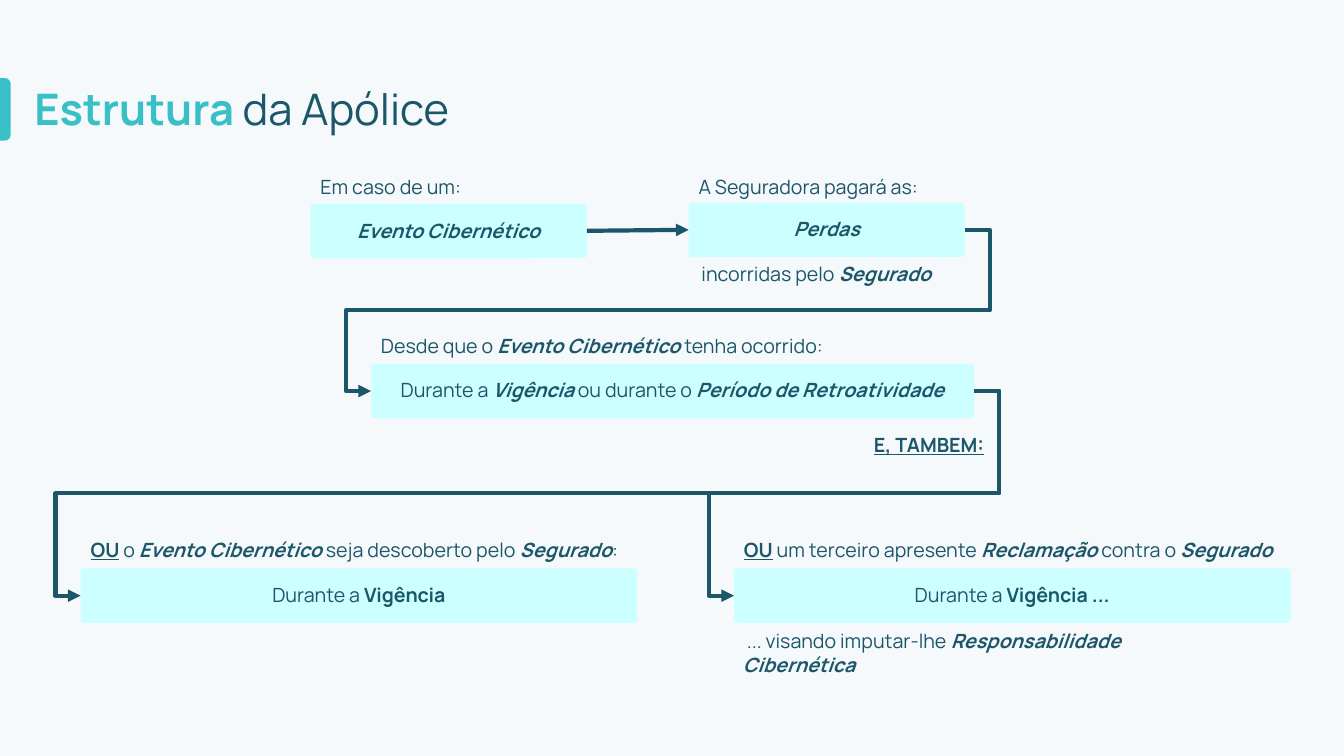
"""Builds the policy structure flow slide."""
from dataclasses import dataclass

from lxml import etree
from pptx import Presentation
from pptx import util as u
from pptx.dml import color
from pptx.enum import shapes, text
from pptx.oxml import ns

FONT = "Manrope"
DARK, TEAL, PALE, BACKGROUND = "1B5669", "39BFC6", "CCFFFF", "F5F9FB"
BOX_HEIGHT, LABEL_HEIGHT, STUB = 0.54, 0.34, 0.25
BOTTOM_BOX_TOP, BOTTOM_LABEL_TOP, BOTTOM_WIDTH = 5.64, 5.29, 5.52


@dataclass
class Piece:
    content: str
    style: str = ""
    size: float = 14
    color: str = DARK


@dataclass
class Block:
    left: float
    top: float
    width: float
    pieces: list[Piece]
    line_spacing: float | None = None


@dataclass
class Elbow:
    start: str
    end: str


BOXES = {
    "event": Block(3.08, 2.02, 2.74, [Piece("Evento Cibernético", "bi")]),
    "losses": Block(6.83, 2.01, 2.74, [Piece("Perdas", "bi")], 0.9),
    "period": Block(3.68, 3.61, 5.98, [
        Piece("Durante a "), Piece("Vigência ", "bi"), Piece("ou durante o "),
        Piece("Período de Retroatividade", "bi")], 0.9),
    "discovery": Block(0.8, BOTTOM_BOX_TOP, BOTTOM_WIDTH, [
        Piece("Durante a"), Piece(" Vigência", "b")], 0.9),
    "claim": Block(7.28, BOTTOM_BOX_TOP, BOTTOM_WIDTH, [
        Piece("Durante a"), Piece(" Vigência ...", "b")], 0.9),
}

LABELS = [
    Block(3.08, 1.69, 1.65, [Piece("Em caso de um:")]),
    Block(6.83, 1.69, 2.48, [Piece("A Seguradora pagará as:")]),
    Block(6.82, 2.55, 2.53, [Piece(" incorridas pelo "), Piece("Segurado", "bi")]),
    Block(3.68, 3.26, 4.68, [
        Piece("Desde que o "), Piece("Evento Cibernético ", "bi"), Piece("tenha ocorrido:")]),
    Block(8.57, 4.25, 1.3, [Piece("E, TAMBEM:", "bu")]),
    Block(0.8, BOTTOM_LABEL_TOP, 5.46, [
        Piece("OU", "bu"), Piece(" o "), Piece("Evento Cibernético", "bi"),
        Piece(" seja descoberto pelo "), Piece("Segurado", "bi"), Piece(":")]),
    Block(7.28, BOTTOM_LABEL_TOP, BOTTOM_WIDTH, [
        Piece("OU", "bu"), Piece(" um terceiro apresente "), Piece("Reclamação", "bi"),
        Piece(" contra o "), Piece("Segurado", "bi")]),
    Block(7.27, 6.19, 5.04, [
        Piece(" ... visando imputar-lhe "), Piece("Responsabilidade Cibernética", "bi")]),
]

ELBOWS = [Elbow("losses", "period"), Elbow("period", "discovery"), Elbow("period", "claim")]


def paint(target, hex_color: str) -> None:
    target.solid()
    target.fore_color.rgb = color.RGBColor.from_string(hex_color)


def write(frame, pieces: list[Piece], align, line_spacing: float | None = None) -> None:
    frame.word_wrap = True
    paragraph = frame.paragraphs[0]
    paragraph.alignment = align
    if line_spacing:
        paragraph.line_spacing = line_spacing
    for piece in pieces:
        run = paragraph.add_run()
        run.text = piece.content
        font = run.font
        font.name, font.size = FONT, u.Pt(piece.size)
        font.bold = "b" in piece.style
        font.italic = "i" in piece.style
        font.underline = "u" in piece.style
        paint(font.fill, piece.color)


def add_plain_shape(slide, preset, left: float, top: float, width: float, height: float,
                    fill: str):
    shape = slide.shapes.add_shape(
        preset, u.Inches(left), u.Inches(top), u.Inches(width), u.Inches(height))
    shape.shadow.inherit = False
    paint(shape.fill, fill)
    shape.line.fill.background()
    return shape


def add_title(slide) -> None:
    title = slide.shapes.title
    title.left, title.top = u.Inches(0.34), u.Inches(0.87)
    title.width, title.height = u.Inches(12.25), u.Inches(0.44)
    frame = title.text_frame
    frame.margin_left = frame.margin_right = frame.margin_top = frame.margin_bottom = 0
    frame.auto_size = text.MSO_AUTO_SIZE.NONE
    frame.vertical_anchor = text.MSO_ANCHOR.TOP
    write(frame, [Piece("Estrutura ", "b", 31, TEAL), Piece("da Apólice", "", 31)],
          text.PP_ALIGN.LEFT, 0.9)


def add_box(slide, block: Block):
    box = add_plain_shape(slide, shapes.MSO_SHAPE.ROUNDED_RECTANGLE,
                          block.left, block.top, block.width, BOX_HEIGHT, PALE)
    box.adjustments[0] = 0.06
    box.text_frame.vertical_anchor = text.MSO_ANCHOR.MIDDLE
    write(box.text_frame, block.pieces, text.PP_ALIGN.CENTER, block.line_spacing)
    return box


def add_label(slide, block: Block) -> None:
    label = slide.shapes.add_textbox(u.Inches(block.left), u.Inches(block.top),
                                     u.Inches(block.width), u.Inches(LABEL_HEIGHT))
    label.text_frame.auto_size = text.MSO_AUTO_SIZE.SHAPE_TO_FIT_TEXT
    write(label.text_frame, block.pieces, text.PP_ALIGN.LEFT)


def add_arrow(slide, kind, start, end):
    arrow = slide.shapes.add_connector(
        kind, start.left + start.width, start.top + start.height // 2,
        end.left, end.top + end.height // 2)
    paint(arrow.line.fill, DARK)
    arrow.line.width = u.Pt(3)
    etree.SubElement(arrow.line._get_or_add_ln(), ns.qn("a:tailEnd"), type="triangle")
    etree.SubElement(arrow._element.spPr, ns.qn("a:effectLst"))
    return arrow


def add_elbow(slide, start, end) -> None:
    arrow = add_arrow(slide, shapes.MSO_CONNECTOR.ELBOW, start, end)
    geometry = arrow._element.spPr.find(ns.qn("a:prstGeom"))
    geometry.set("prst", "bentConnector5")
    guides = geometry.find(ns.qn("a:avLst"))
    if guides is None:
        guides = etree.SubElement(geometry, ns.qn("a:avLst"))
    stub = u.Inches(STUB) / arrow.width
    for number, share in enumerate((-stub, 0.5, 1 + stub), 1):
        etree.SubElement(guides, ns.qn("a:gd"), name=f"adj{number}",
                         fmla=f"val {round(share * 100000)}")


def main() -> None:
    presentation = Presentation()
    presentation.slide_width, presentation.slide_height = u.Inches(13.33), u.Inches(7.5)
    slide = presentation.slides.add_slide(presentation.slide_layouts[5])
    paint(slide.background.fill, BACKGROUND)
    marker = add_plain_shape(slide, shapes.MSO_SHAPE.ROUND_2_SAME_RECTANGLE,
                             -0.26, 1.03, 0.62, 0.11, TEAL)
    marker.rotation = 90
    marker.adjustments[0] = 0.5
    add_title(slide)
    boxes = {name: add_box(slide, block) for name, block in BOXES.items()}
    for block in LABELS:
        add_label(slide, block)
    straight = add_arrow(slide, shapes.MSO_CONNECTOR.STRAIGHT, boxes["event"], boxes["losses"])
    straight.begin_connect(boxes["event"], 3)
    straight.end_connect(boxes["losses"], 1)
    for elbow in ELBOWS:
        add_elbow(slide, boxes[elbow.start], boxes[elbow.end])
    presentation.save("out.pptx")


if __name__ == "__main__":
    main()
